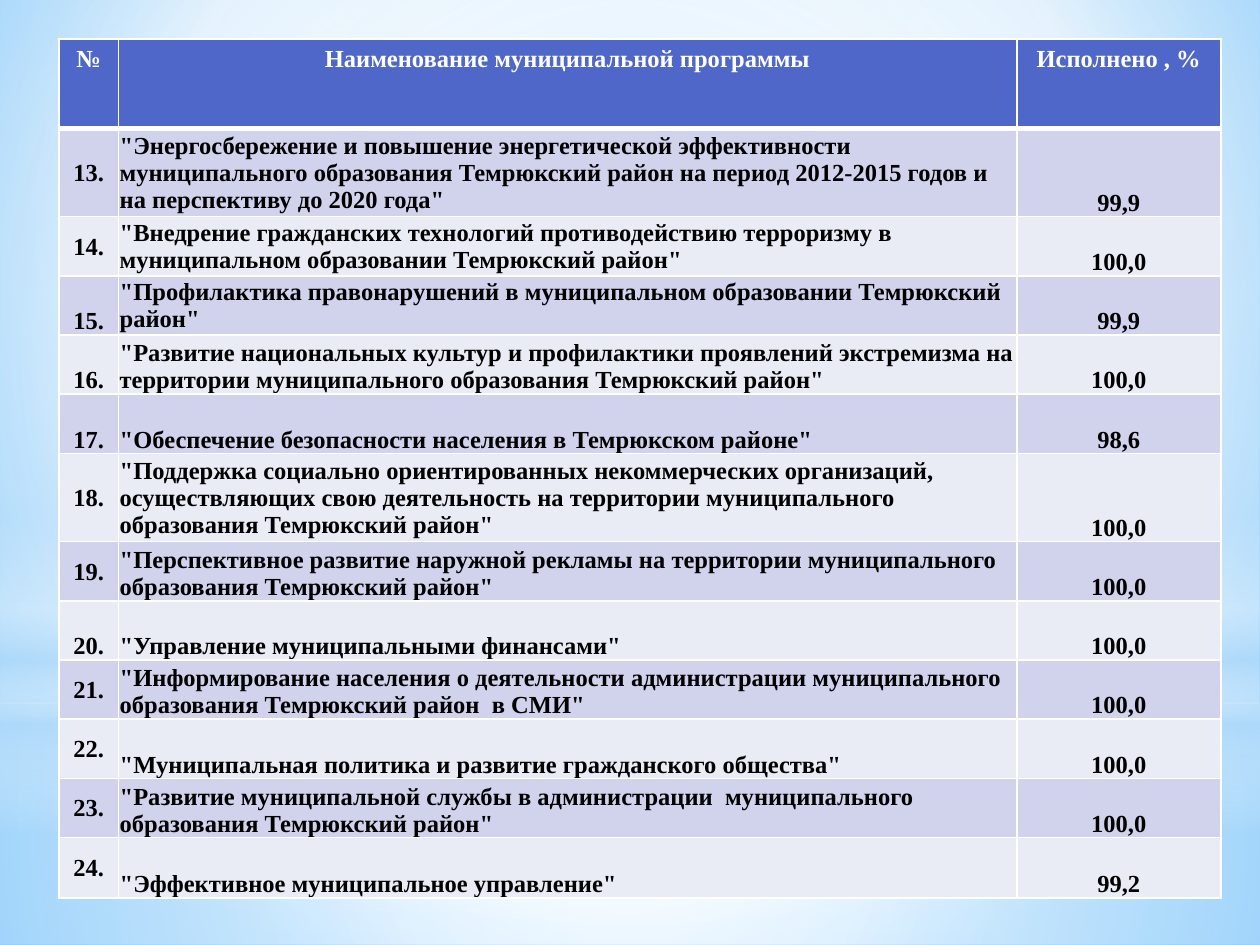
from dataclasses import dataclass

from pptx import Presentation
from pptx.dml.color import RGBColor
from pptx.enum.shapes import MSO_SHAPE
from pptx.enum.text import MSO_ANCHOR, PP_ALIGN
from pptx.oxml import parse_xml
from pptx.oxml.ns import nsdecls, qn
from pptx.util import Inches, Pt


@dataclass(frozen=True)
class Theme:
    font: str = "Times New Roman"
    size: int = 14
    header: str = "4E67C8"
    bands: tuple = ("D0D3EB", "E9EBF5")
    white: str = "FFFFFF"
    black: str = "000000"
    sky: str = "B4DCFA"
    sky_inner: str = "9ED5FF"
    sky_outer: str = "5BB9FF"


THEME = Theme()
MIDDLE, BOTTOM = MSO_ANCHOR.MIDDLE, MSO_ANCHOR.BOTTOM
LEFT, CENTER, JUSTIFY = PP_ALIGN.LEFT, PP_ALIGN.CENTER, PP_ALIGN.JUSTIFY
MID_BOX = (50, 50, 50, 50)
HEADERS = ("№", "Наименование муниципальной программы", "Исполнено , %")
FIRST_NUMBER = 13
COL_WIDTHS = (0.47, 7.13, 1.62)
HEADER_HEIGHT = 0.71
PROGRAMS = [
    ('"Энергосбережение и повышение энергетической эффективности муниципального образования '
     'Темрюкский район на период 2012-2015 годов и на перспективу до 2020 года"',
     "99,9", 0.7, MIDDLE, MIDDLE, LEFT),
    ('"Внедрение гражданских технологий противодействию терроризму в муниципальном '
     'образовании Темрюкский район"', "100,0", 0.47, MIDDLE, MIDDLE, LEFT),
    ('"Профилактика правонарушений в муниципальном образовании Темрюкский район"',
     "99,9", 0.47, BOTTOM, MIDDLE, LEFT),
    ('"Развитие национальных культур и профилактики проявлений экстремизма на территории '
     'муниципального образования Темрюкский район"', "100,0", 0.47, BOTTOM, BOTTOM, LEFT),
    ('"Обеспечение безопасности населения в Темрюкском районе"',
     "98,6", 0.47, BOTTOM, BOTTOM, LEFT),
    ('"Поддержка социально ориентированных некоммерческих организаций, осуществляющих свою '
     'деятельность на территории муниципального образования Темрюкский район"',
     "100,0", 0.7, MIDDLE, MIDDLE, LEFT),
    ('"Перспективное развитие наружной рекламы на территории муниципального образования '
     'Темрюкский район"', "100,0", 0.47, MIDDLE, BOTTOM, LEFT),
    ('"Управление муниципальными финансами"', "100,0", 0.47, BOTTOM, BOTTOM, LEFT),
    ('"Информирование населения о деятельности администрации муниципального образования '
     'Темрюкский район  в СМИ"', "100,0", 0.47, MIDDLE, BOTTOM, LEFT),
    ('"Муниципальная политика и развитие гражданского общества"',
     "100,0", 0.47, MIDDLE, BOTTOM, LEFT),
    ('"Развитие муниципальной службы в администрации  муниципального образования '
     'Темрюкский район"', "100,0", 0.47, MIDDLE, BOTTOM, LEFT),
    ('"Эффективное муниципальное управление"', "99,2", 0.48, MIDDLE, BOTTOM, JUSTIFY),
]


def set_gradient(fill, element, stops, box=None):
    fill.gradient()
    old = element.find(".//" + qn("a:gradFill"))
    gs = "".join(
        f'<a:gs pos="{pos * 1000}"><a:srgbClr val="{color}">'
        f'<a:alpha val="{alpha * 1000}"/></a:srgbClr></a:gs>'
        for pos, color, alpha in stops)
    if box:
        sides = " ".join(f'{k}="{v * 1000}"' for k, v in zip("ltrb", box))
        direction = f'<a:path path="circle"><a:fillToRect {sides}/></a:path>'
    else:
        direction = '<a:lin ang="5400000" scaled="0"/>'
    new = parse_xml(f'<a:gradFill {nsdecls("a")} rotWithShape="1">'
                    f'<a:gsLst>{gs}</a:gsLst>{direction}</a:gradFill>')
    old.getparent().replace(old, new)


def add_glow(s, kind, top, height, stops, box=None):
    sp = s.shapes.add_shape(kind, 0, Inches(top), Inches(10), Inches(height))
    sp.shadow.inherit = False
    sp.line.fill.background()
    set_gradient(sp.fill, sp._element.spPr, stops, box)


def add_backdrop(s):
    white, sky = THEME.white, THEME.sky
    set_gradient(s.background.fill, s._element,
                 [(0, THEME.sky_inner, 100), (60, white, 100), (100, THEME.sky_outer, 100)],
                 (20, 10, 20, 60))
    add_glow(s, MSO_SHAPE.RECTANGLE, 5.58, 1.92,
             [(0, white, 91), (37, white, 76), (100, sky, 79)], MID_BOX)
    add_glow(s, MSO_SHAPE.RECTANGLE, 0, 5.58,
             [(0, white, 89), (48, white, 62), (100, sky, 79)], MID_BOX)
    add_glow(s, MSO_SHAPE.RECTANGLE, 4.12, 2.5,
             [(0, white, 0), (29, white, 30), (45, sky, 40),
              (55, white, 26), (65, sky, 60), (100, white, 0)])
    add_glow(s, MSO_SHAPE.OVAL, 1.75, 5.58, [(0, white, 100), (56, white, 0)], MID_BOX)


def set_borders(cell, top=1, bottom=1):
    tcPr = cell._tc.get_or_add_tcPr()
    for i, (side, width) in enumerate(zip("LRTB", (1, 1, top, bottom))):
        tcPr.insert(i, parse_xml(
            f'<a:ln{side} {nsdecls("a")} w="{Pt(width)}"><a:solidFill>'
            f'<a:srgbClr val="{THEME.white}"/></a:solidFill></a:ln{side}>'))


def fill_cell(cell, text, fill, color, align):
    cell.text = text
    cell.fill.solid()
    cell.fill.fore_color.rgb = RGBColor.from_string(fill)
    p = cell.text_frame.paragraphs[0]
    p.alignment = align
    p.font.name = THEME.font
    p.font.size = Pt(THEME.size)
    p.font.bold = True
    p.font.color.rgb = RGBColor.from_string(color)


def fill_body_cell(cell, text, fill, align, anchor):
    fill_cell(cell, text, fill, THEME.black, align)
    cell.margin_left = cell.margin_right = cell.margin_top = Inches(0.01)
    cell.margin_bottom = 0
    cell.vertical_anchor = anchor


def add_program_table(s):
    heights = [HEADER_HEIGHT] + [program[2] for program in PROGRAMS]
    table = s.shapes.add_table(len(heights), len(COL_WIDTHS), Inches(0.47), Inches(0.31),
                               Inches(sum(COL_WIDTHS)), Inches(sum(heights))).table
    for col, width in zip(table.columns, COL_WIDTHS):
        col.width = Inches(width)
    for row, height in zip(table.rows, heights):
        row.height = Inches(height)
    for cell, text in zip(table.rows[0].cells, HEADERS):
        fill_cell(cell, text, THEME.header, THEME.white, CENTER)
        set_borders(cell, bottom=3)
    for i, (name, done, _, number_anchor, name_anchor, name_align) in enumerate(PROGRAMS):
        values = ((f"{FIRST_NUMBER + i}.", CENTER, number_anchor),
                  (name, name_align, name_anchor),
                  (done, CENTER, BOTTOM))
        for cell, (text, align, anchor) in zip(table.rows[i + 1].cells, values):
            fill_body_cell(cell, text, THEME.bands[i % 2], align, anchor)
            set_borders(cell, top=3 if i == 0 else 1)


def main():
    prs = Presentation()
    prs.slide_width, prs.slide_height = Inches(10), Inches(7.5)
    s = prs.slides.add_slide(prs.slide_layouts[6])
    add_backdrop(s)
    add_program_table(s)
    prs.save("out.pptx")


if __name__ == "__main__":
    main()
